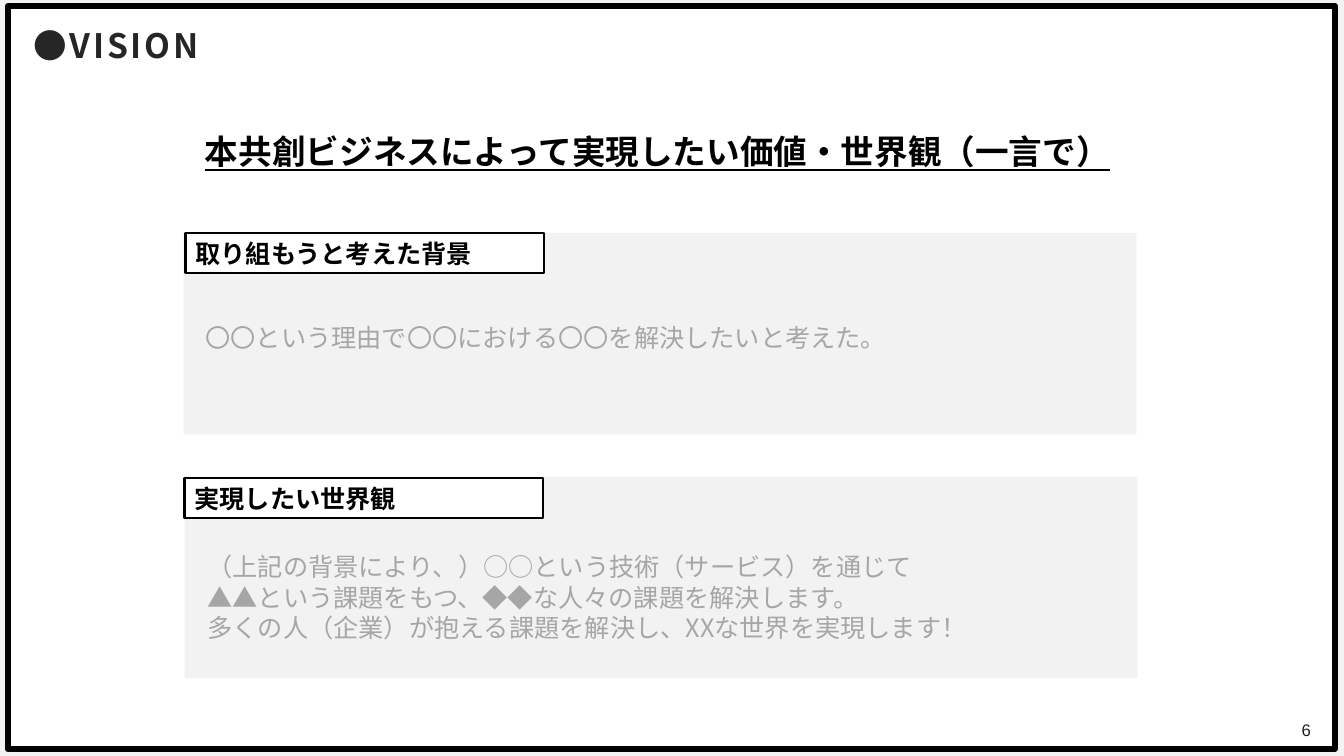
"""Build the VISION slide: a headline above two labelled grey panels."""
from pptx import Presentation
from pptx.dml.color import RGBColor
from pptx.enum.shapes import MSO_SHAPE
from pptx.enum.text import MSO_ANCHOR, PP_ALIGN
from pptx.oxml.ns import qn
from pptx.util import Inches, Pt

RECTANGLE = MSO_SHAPE.RECTANGLE
TOP, MIDDLE = MSO_ANCHOR.TOP, MSO_ANCHOR.MIDDLE
LEFT, CENTER, RIGHT = PP_ALIGN.LEFT, PP_ALIGN.CENTER, PP_ALIGN.RIGHT
CJK_FONT = "Noto Sans CJK JP"
LINE_PITCH = 1.21
COLORS = {
    "white": "FFFFFF",
    "black": "000000",
    "panel": "F2F2F2",
    "heading": "262626",
    "body": "A6A6A6",
    "number": "1F2021",
}

presentation = Presentation()
presentation.slide_width = Inches(13.33)
presentation.slide_height = Inches(7.5)
slide = presentation.slides.add_slide(presentation.slide_layouts[6])
slide.background.fill.solid()
slide.background.fill.fore_color.rgb = RGBColor.from_string(COLORS["panel"])


def add_box(box, fill, line_width=0):
    """Add a filled rectangle, outlined in black if a line width is given."""
    shape = slide.shapes.add_shape(RECTANGLE, *map(Inches, box))
    shape.shadow.inherit = False
    shape.fill.solid()
    shape.fill.fore_color.rgb = RGBColor.from_string(COLORS[fill])
    if line_width:
        shape.line.color.rgb = RGBColor.from_string(COLORS["black"])
        shape.line.width = Pt(line_width)
    else:
        shape.line.fill.background()
    return shape


def write(shape, text, size, color, bold=False, align=LEFT, anchor=TOP, font=CJK_FONT):
    """Fill a shape with text and format every paragraph alike."""
    frame = shape.text_frame
    frame.word_wrap = True
    frame.vertical_anchor = anchor
    frame.text = text
    for paragraph in frame.paragraphs:
        paragraph.alignment = align
        paragraph.line_spacing = Pt(size * LINE_PITCH)
        for run in paragraph.runs:
            run.font.size = Pt(size)
            run.font.bold = bold
            run.font.name = font
            run.font.color.rgb = RGBColor.from_string(COLORS[color])
            east_asian = run.font._element.makeelement(qn("a:ea"), {"typeface": font})
            run.font._element.append(east_asian)
    return frame


add_box((0.08, 0.06, 13.16, 7.37), "white", 4.5)

heading = slide.shapes.add_textbox(Inches(0.13), Inches(0.1), Inches(8.24), Inches(0.74))
heading_frame = write(heading, "●VISION", 24, "heading", bold=True, anchor=MIDDLE)
heading_frame.margin_left = heading_frame.margin_right = Inches(0.2)
heading_frame.margin_top = heading_frame.margin_bottom = Inches(0.2)
heading_paragraph = heading_frame.paragraphs[0]
heading_paragraph.line_spacing = 0.9
heading_paragraph.runs[0].font._element.set("spc", "200")

headline = add_box((0.57, 1.25, 11.9, 0.5), "white")
headline_frame = write(headline, "本共創ビジネスによって実現したい価値・世界観（一言で）",
                       24, "black", bold=True, align=CENTER)
headline_frame.paragraphs[0].runs[0].font.underline = True

sections = [
    ((1.82, 2.31), (1.84, 2.31), "取り組もうと考えた背景",
     (1.94, 3.15, 8.97, 0.4), "〇〇という理由で〇〇における〇〇を解決したいと考えた。"),
    ((1.83, 4.73), (1.83, 4.74), "実現したい世界観",
     (1.96, 5.42, 8.97, 1.31),
     "（上記の背景により、）○○という技術（サービス）を通じて\n"
     "▲▲という課題をもつ、◆◆な人々の課題を解決します。\n"
     "多くの人（企業）が抱える課題を解決し、XXな世界を実現します！"),
]
for panel_corner, label_corner, label_text, body_box, body_text in sections:
    add_box((*panel_corner, 9.45, 2), "panel")
    body = slide.shapes.add_textbox(*map(Inches, body_box))
    write(body, body_text, 18, "body")
    label = add_box((*label_corner, 3.56, 0.4), "white", 1.5)
    write(label, label_text, 18, "black", bold=True)

page_number = slide.shapes.add_textbox(Inches(12.27), Inches(7.16), Inches(0.83), Inches(0.15))
write(page_number, "6", 12, "number", align=RIGHT, anchor=MIDDLE, font="Arial")

presentation.save("out.pptx")
